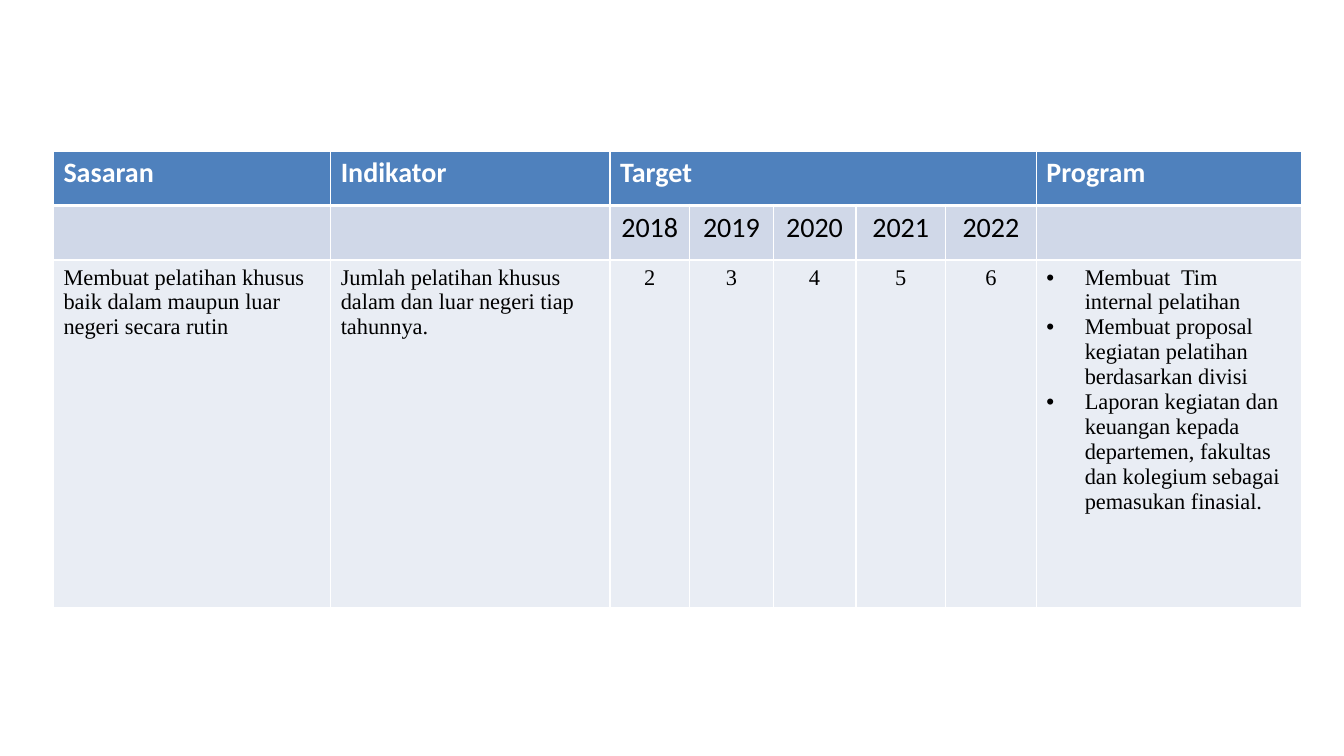
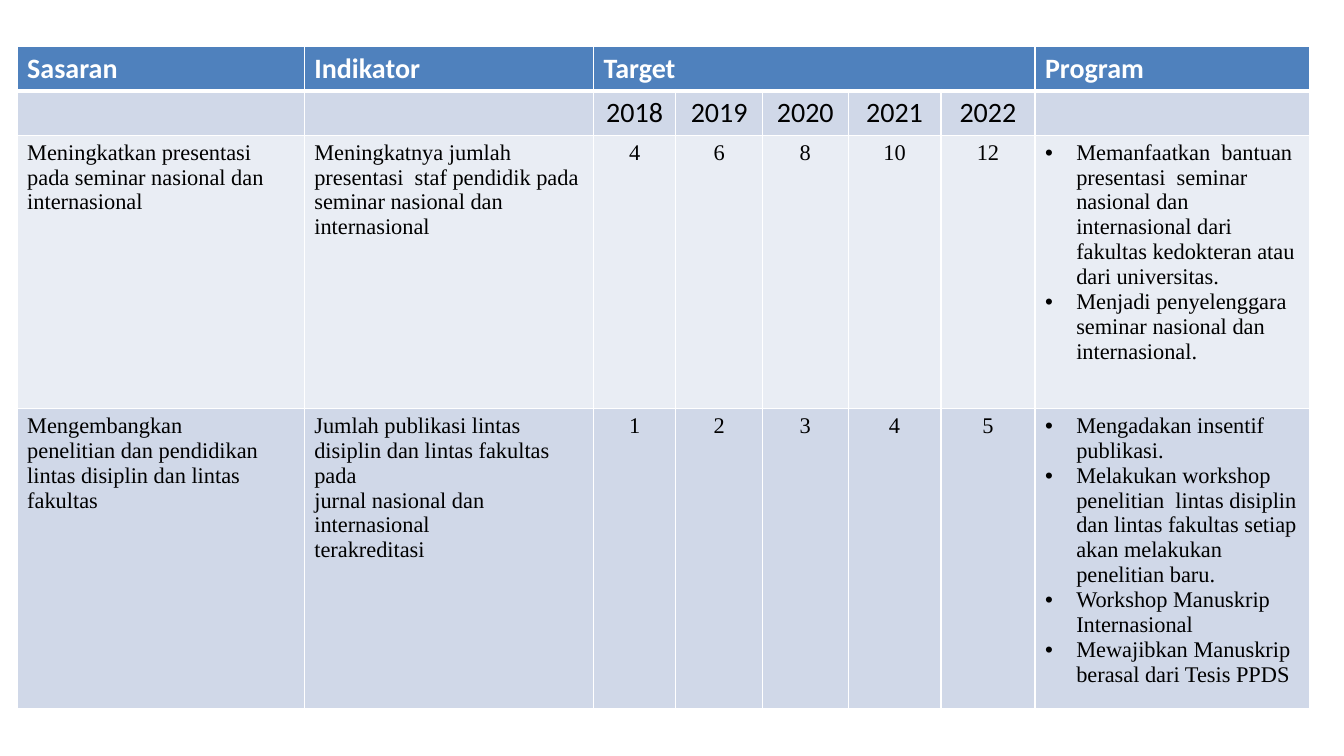
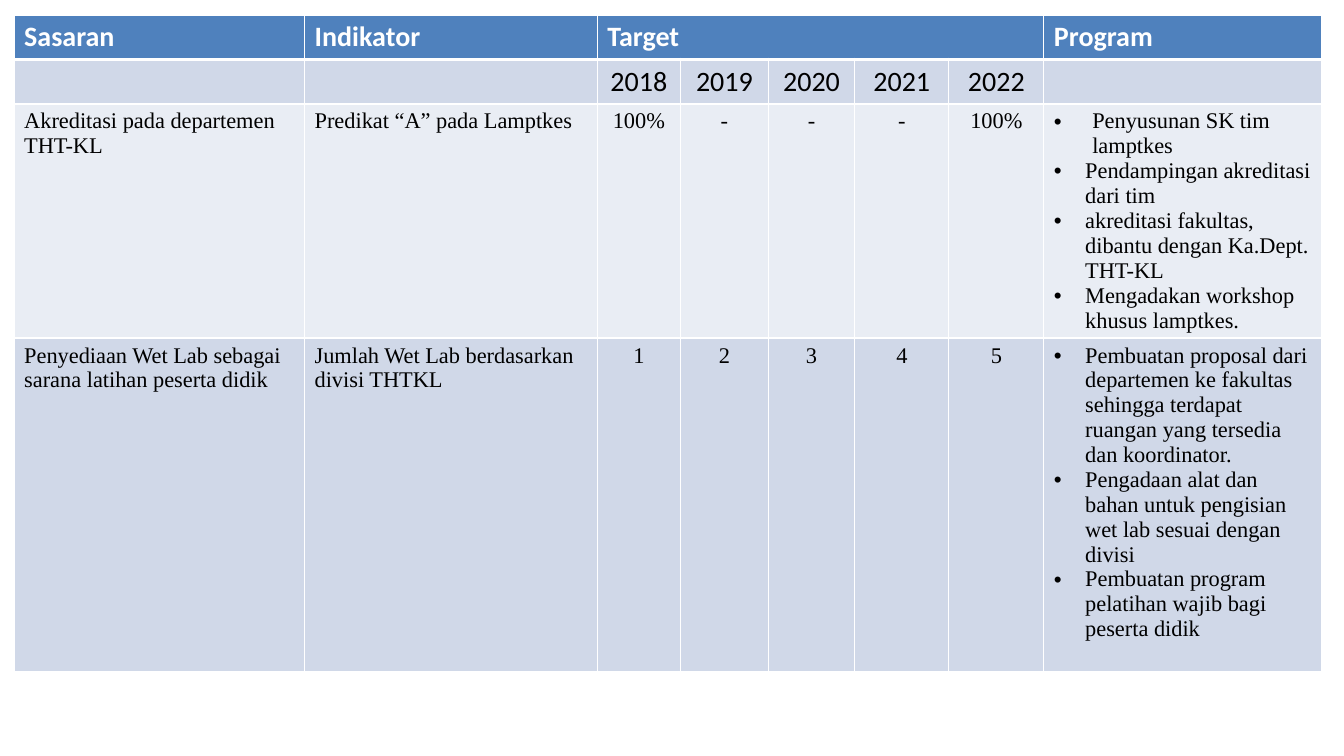
from lxml import etree
from pptx import Presentation
from pptx.dml.color import RGBColor
from pptx.enum.text import PP_ALIGN
from pptx.oxml.ns import qn
from pptx.util import Inches, Pt

LEFT = PP_ALIGN.LEFT
MID = PP_ALIGN.CENTER


class Theme:
    white = "FFFFFF"
    black = "000000"
    blue = "4F81BD"
    band = "D0D8E8"
    pale = "E9EDF4"
    head = ("Calibri", 20, white, True)
    year = ("Calibri", 20, black, False)
    body = ("Times New Roman", 16, black, False)
    thin = 1
    thick = 3
    near = 0.31
    far = 0.38


def paint(cell, fill, top, base):
    props = cell._tc.get_or_add_tcPr()
    for side, width in (("L", Theme.thin), ("R", Theme.thin), ("T", top), ("B", base)):
        line = etree.SubElement(props, qn("a:ln" + side), w=str(Pt(width)))
        solid = etree.SubElement(line, qn("a:solidFill"))
        etree.SubElement(solid, qn("a:srgbClr"), val=Theme.white)
    cell.fill.solid()
    cell.fill.fore_color.rgb = RGBColor.from_string(fill)


def write(cell, items, look, align=LEFT):
    face, size, tint, bold = look
    frame = cell.text_frame
    for spot, (hang, text) in enumerate(items):
        para = frame.add_paragraph() if spot else frame.paragraphs[0]
        para.alignment = align
        if hang:
            props = para._p.get_or_add_pPr()
            props.set("marL", str(Inches(hang)))
            props.set("indent", str(-Inches(hang)))
            etree.SubElement(props, qn("a:buFont"), typeface="Arial")
            etree.SubElement(props, qn("a:buChar"), char="•")
        run = para.add_run()
        run.text = text
        run.font.name = face
        run.font.size = Pt(size)
        run.font.bold = bold
        run.font.color.rgb = RGBColor.from_string(tint)


NEAR, FAR = Theme.near, Theme.far
HEADS = {0: "Sasaran", 1: "Indikator", 2: "Target", 7: "Program"}
YEARS = range(2018, 2023)
COLS = [2.75, 2.77, 0.79, 0.83, 0.82, 0.89, 0.9, 2.63]

PLANS = [
    {
        "place": (0.53, 1.5, 12.38),
        "rows": [0.54, 0.54, 3.45],
        "goals": [
            (
                ["Membuat pelatihan khusus baik dalam maupun luar negeri secara rutin"],
                ["Jumlah pelatihan khusus dalam dan luar negeri tiap tahunnya."],
                ["2", "3", "4", "5", "6"],
                [
                    (FAR, "Membuat  Tim internal pelatihan"),
                    (FAR, "Membuat proposal kegiatan pelatihan berdasarkan divisi"),
                    (FAR, "Laporan kegiatan dan keuangan kepada departemen, fakultas "
                          "dan kolegium sebagai pemasukan finasial."),
                ],
            ),
        ],
    },
    {
        "place": (0.17, 0.46, 12.82),
        "rows": [0.44, 0.44, 2.71, 2.98],
        "goals": [
            (
                ["Meningkatkan presentasi pada seminar nasional dan internasional"],
                ["Meningkatnya jumlah presentasi  staf pendidik pada seminar "
                 "nasional dan internasional"],
                ["4", "6", "8", "10", "12"],
                [
                    (NEAR, "Memanfaatkan  bantuan presentasi  seminar nasional dan "
                           "internasional dari fakultas kedokteran atau dari universitas."),
                    (NEAR, "Menjadi penyelenggara seminar nasional dan internasional."),
                ],
            ),
            (
                ["Mengembangkan", "penelitian dan pendidikan",
                 "lintas disiplin dan lintas fakultas"],
                ["Jumlah publikasi lintas disiplin dan lintas fakultas pada",
                 "jurnal nasional dan internasional", "terakreditasi"],
                ["1", "2", "3", "4", "5"],
                [
                    (NEAR, "Mengadakan insentif publikasi."),
                    (NEAR, "Melakukan workshop penelitian  lintas disiplin dan lintas "
                           "fakultas setiap akan melakukan penelitian baru."),
                    (NEAR, "Workshop Manuskrip Internasional"),
                    (NEAR, "Mewajibkan Manuskrip berasal dari Tesis PPDS"),
                ],
            ),
        ],
    },
    {
        "place": (0.14, 0.15, 12.97),
        "rows": [0.44, 0.44, 2.32, 3.31],
        "goals": [
            (
                ["Akreditasi pada departemen THT-KL"],
                ["Predikat “A” pada Lamptkes"],
                ["100%", "-", "-", "-", "100%"],
                [
                    (FAR, "Penyusunan SK tim lamptkes"),
                    (NEAR, "Pendampingan akreditasi dari tim"),
                    (NEAR, "akreditasi fakultas, dibantu dengan Ka.Dept. THT-KL"),
                    (NEAR, "Mengadakan workshop khusus lamptkes."),
                ],
            ),
            (
                ["Penyediaan Wet Lab sebagai sarana latihan peserta didik"],
                ["Jumlah Wet Lab berdasarkan divisi THTKL"],
                ["1", "2", "3", "4", "5"],
                [
                    (NEAR, "Pembuatan proposal dari departemen ke fakultas sehingga "
                           "terdapat ruangan yang tersedia dan koordinator."),
                    (NEAR, "Pengadaan alat dan bahan untuk pengisian wet lab sesuai "
                           "dengan divisi"),
                    (NEAR, "Pembuatan program pelatihan wajib bagi peserta didik"),
                ],
            ),
        ],
    },
]

deck = Presentation()
deck.slide_width = Inches(13.33)
deck.slide_height = Inches(7.5)

for plan in PLANS:
    slide = deck.slides.add_slide(deck.slide_layouts[6])
    left, top, width = plan["place"]
    rows = plan["rows"]
    grid = slide.shapes.add_table(
        len(rows), len(COLS), Inches(left), Inches(top), Inches(width), Inches(sum(rows))
    ).table
    grid.horz_banding = False
    for col, share in zip(grid.columns, COLS):
        col.width = Inches(share * width / sum(COLS))
    for row, tall in zip(grid.rows, rows):
        row.height = Inches(tall)

    for r in range(len(rows)):
        fill = Theme.blue if r == 0 else Theme.band if r % 2 else Theme.pale
        over = Theme.thick if r == 1 else Theme.thin
        under = Theme.thick if r == 0 else Theme.thin
        for c in range(len(COLS)):
            paint(grid.cell(r, c), fill, over, under)

    grid.cell(0, 2).merge(grid.cell(0, 6))
    for c, name in HEADS.items():
        write(grid.cell(0, c), [(0, name)], Theme.head)
    for c, year in enumerate(YEARS, 2):
        write(grid.cell(1, c), [(0, str(year))], Theme.year, MID)

    for r, (goal, mark, marks, tasks) in enumerate(plan["goals"], 2):
        write(grid.cell(r, 0), [(0, text) for text in goal], Theme.body)
        write(grid.cell(r, 1), [(0, text) for text in mark], Theme.body)
        for c, value in enumerate(marks, 2):
            write(grid.cell(r, c), [(0, value)], Theme.body, MID)
        write(grid.cell(r, 7), tasks, Theme.body)

deck.save("out.pptx")
